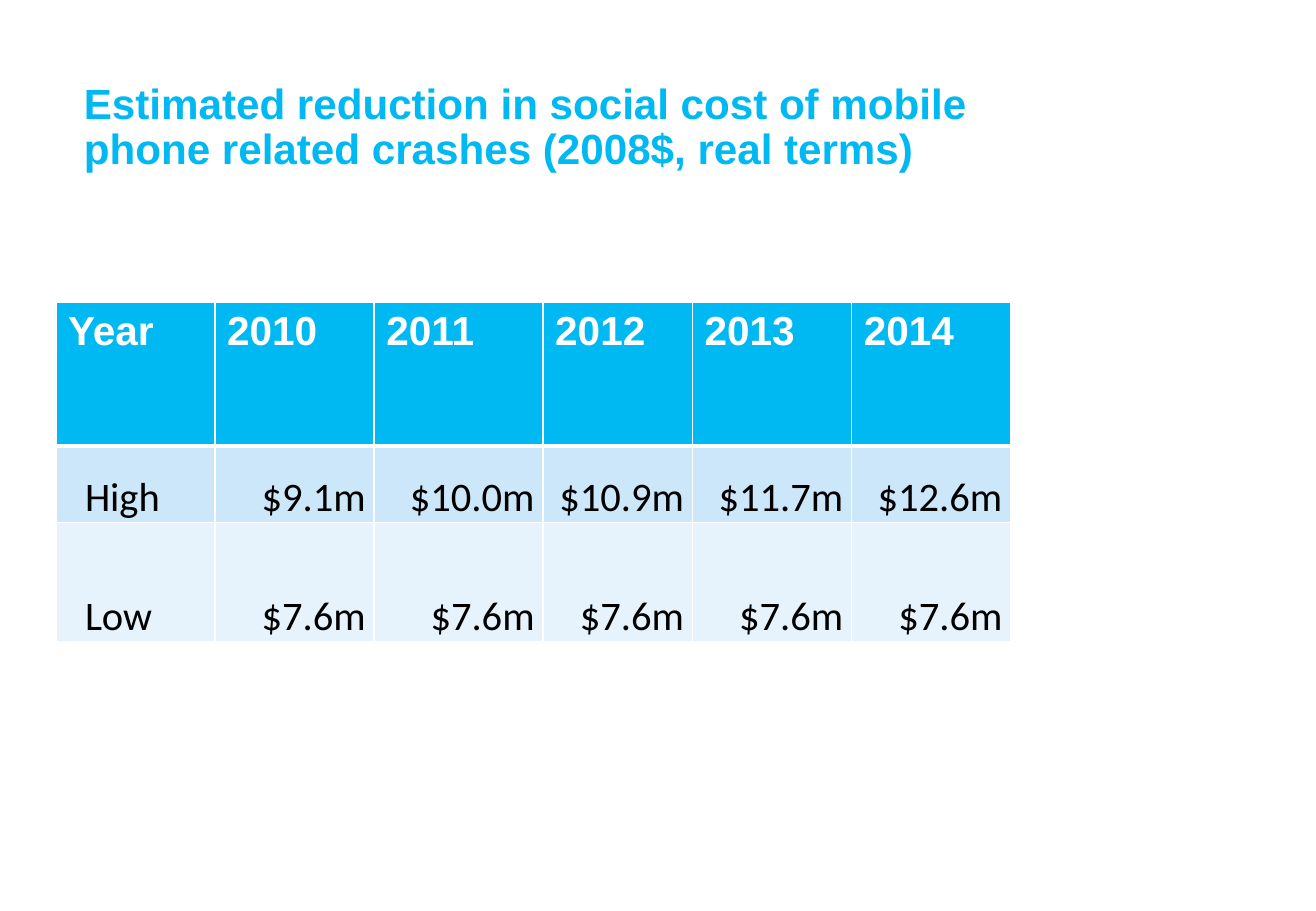
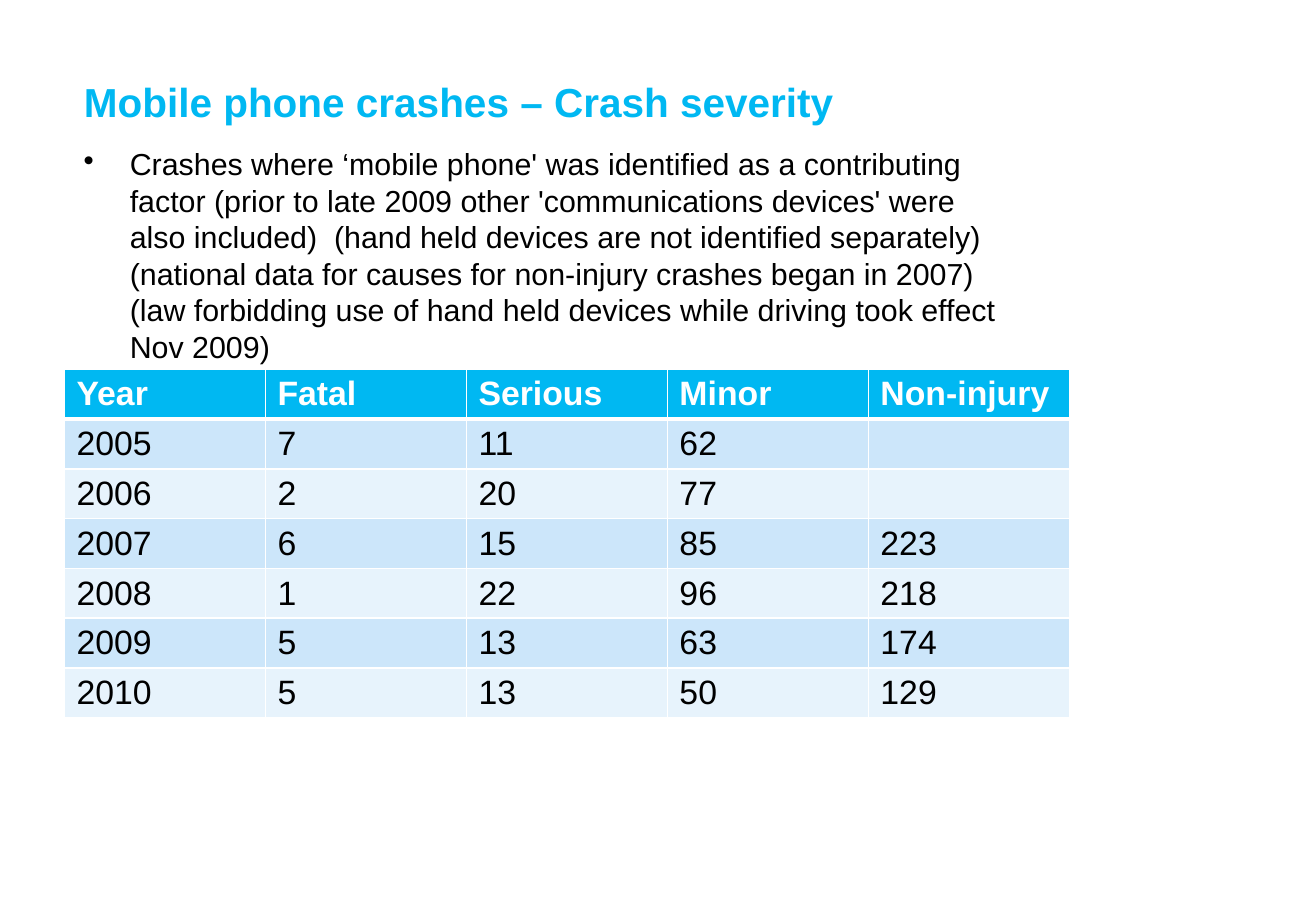
import pptx
import pptx.util
import pptx.dml.color
import pptx.enum.text
import pptx.oxml
import pptx.oxml.ns
from pptx.util import Inches, Pt
from pptx.dml.color import RGBColor
from pptx.enum.text import MSO_ANCHOR, MSO_AUTO_SIZE, PP_ALIGN

# Shared look
CYAN = RGBColor(0x00, 0xB8, 0xF2)
BAND_DARK = RGBColor(0xCC, 0xE6, 0xFA)
BAND_LIGHT = RGBColor(0xE7, 0xF3, 0xFC)
WHITE = RGBColor(0xFF, 0xFF, 0xFF)
BLACK = RGBColor(0x00, 0x00, 0x00)
HEADING_FONT = "Arial"
FIGURE_FONT = "Calibri"
TEXT_LEFT, TEXT_WIDTH = Inches(0.59), Inches(7.87)

# Content
COST_TITLE = ("Estimated reduction in social cost of mobile phone "
              "related crashes (2008$, real terms)")
COST_ROWS = [
    ["Year", "2010", "2011", "2012", "2013", "2014"],
    ["High", "$9.1m", "$10.0m", "$10.9m", "$11.7m", "$12.6m"],
    ["Low"] + ["$7.6m"] * 5,
]
SEVERITY_TITLE = "Mobile phone crashes – Crash severity"
SEVERITY_NOTE = (
    "Crashes where ‘mobile phone' was identified as a contributing factor "
    "(prior to late 2009 other 'communications devices' were also included)  "
    "(hand held devices are not identified separately) "
    "(national data for causes for non-injury crashes began in 2007) "
    "(law forbidding use of hand held devices while driving took effect Nov 2009)")
SEVERITY_ROWS = [
    ["Year", "Fatal", "Serious", "Minor", "Non-injury"],
    ["2005", "7", "11", "62", ""],
    ["2006", "2", "20", "77", ""],
    ["2007", "6", "15", "85", "223"],
    ["2008", "1", "22", "96", "218"],
    ["2009", "5", "13", "63", "174"],
    ["2010", "5", "13", "50", "129"],
]


def style_font(font, size, color, name=HEADING_FONT, bold=False):
    font.size, font.name, font.bold = Pt(size), name, bold
    font.color.rgb = color


def add_titled_slide(deck, heading, size):
    slide = deck.slides.add_slide(deck.slide_layouts[5])
    title = slide.shapes.title
    title.left, title.top = TEXT_LEFT, Inches(0.63)
    title.width, title.height = TEXT_WIDTH, Inches(0.79)
    frame = title.text_frame
    frame.text = heading
    frame.word_wrap = True
    frame.auto_size = MSO_AUTO_SIZE.NONE
    frame.vertical_anchor = MSO_ANCHOR.TOP
    line = frame.paragraphs[0]
    line.alignment = PP_ALIGN.LEFT
    line.line_spacing = 0.9
    style_font(line.runs[0].font, size, CYAN, bold=True)
    return slide


def add_bullet_note(slide, note):
    box = slide.shapes.add_textbox(TEXT_LEFT, Inches(1.15), TEXT_WIDTH, Inches(1.97))
    frame = box.text_frame
    frame.word_wrap = True
    frame.text = note
    line = frame.paragraphs[0]
    line.line_spacing = 1.0
    properties = line._p.get_or_add_pPr()
    properties.set("marL", str(Inches(0.38)))
    properties.set("indent", str(-Inches(0.38)))
    properties.append(pptx.oxml.parse_xml(
        f'<a:buChar {pptx.oxml.ns.nsdecls("a")} char="•"/>'))
    style_font(line.runs[0].font, 18, BLACK)


def set_cell_borders(cell, top, bottom):
    """White rules on all sides; they go before the fill in the cell XML."""
    properties = cell._tc.get_or_add_tcPr()
    sides = {"lnL": 1, "lnR": 1, "lnT": top, "lnB": bottom}
    for place, (side, width) in enumerate(sides.items()):
        properties.insert(place, pptx.oxml.parse_xml(
            f'<a:{side} {pptx.oxml.ns.nsdecls("a")} w="{Pt(width)}"><a:solidFill>'
            f'<a:srgbClr val="{WHITE}"/></a:solidFill></a:{side}>'))


def add_banded_table(slide, rows, left, top, widths, heights, size, body_font=HEADING_FONT):
    table = slide.shapes.add_table(
        len(rows), len(widths), Inches(left), Inches(top),
        Inches(sum(widths)), Inches(sum(heights))).table
    for column, width in zip(table.columns, widths):
        column.width = Inches(width)
    for row, height in zip(table.rows, heights):
        row.height = Inches(height)
    for r, values in enumerate(rows):
        header = r == 0
        band = CYAN if header else (BAND_LIGHT, BAND_DARK)[r % 2]
        for c, value in enumerate(values):
            cell = table.cell(r, c)
            cell.text = value
            # A tight bottom margin keeps the rows at their set height
            cell.margin_bottom = Inches(0.02)
            cell.fill.solid()
            cell.fill.fore_color.rgb = band
            # The header's heavy rule is also the top of the first body row
            set_cell_borders(cell, top=3 if r == 1 else 1, bottom=3 if header else 1)
            line = cell.text_frame.paragraphs[0]
            for target in [run.font for run in line.runs] or [line.font]:
                style_font(target, size, WHITE if header else BLACK,
                           HEADING_FONT if header else body_font, header)
    return table


def align_cost_figures(table):
    """Body rows sit at the bottom: indented labels, right-aligned amounts."""
    for r in range(1, len(table.rows)):
        for c in range(len(table.columns)):
            cell = table.cell(r, c)
            cell.vertical_anchor = MSO_ANCHOR.BOTTOM
            cell.margin_left = cell.margin_right = Inches(0.07)
            cell.margin_top = cell.margin_bottom = 0
            line = cell.text_frame.paragraphs[0]
            if c == 0:
                line._p.get_or_add_pPr().set("indent", str(Inches(0.17)))
            else:
                line.alignment = PP_ALIGN.RIGHT


def main():
    deck = pptx.Presentation()
    deck.slide_width, deck.slide_height = Inches(10.83), Inches(7.5)

    # Social cost
    cost = add_titled_slide(deck, COST_TITLE, 25)
    cost_table = add_banded_table(
        cost, COST_ROWS, 0.46, 2.49, [1.31, 1.31, 1.39, 1.23, 1.31, 1.31],
        [1.18, 0.63, 0.98], 24, FIGURE_FONT)
    align_cost_figures(cost_table)

    # Crash severity
    severity = add_titled_slide(deck, SEVERITY_TITLE, 24)
    add_bullet_note(severity, SEVERITY_NOTE)
    add_banded_table(severity, SEVERITY_ROWS, 0.53, 3.04, [8.27 / 5] * 5,
                     [0.41] * len(SEVERITY_ROWS), 20)

    deck.save("out.pptx")


if __name__ == "__main__":
    main()
